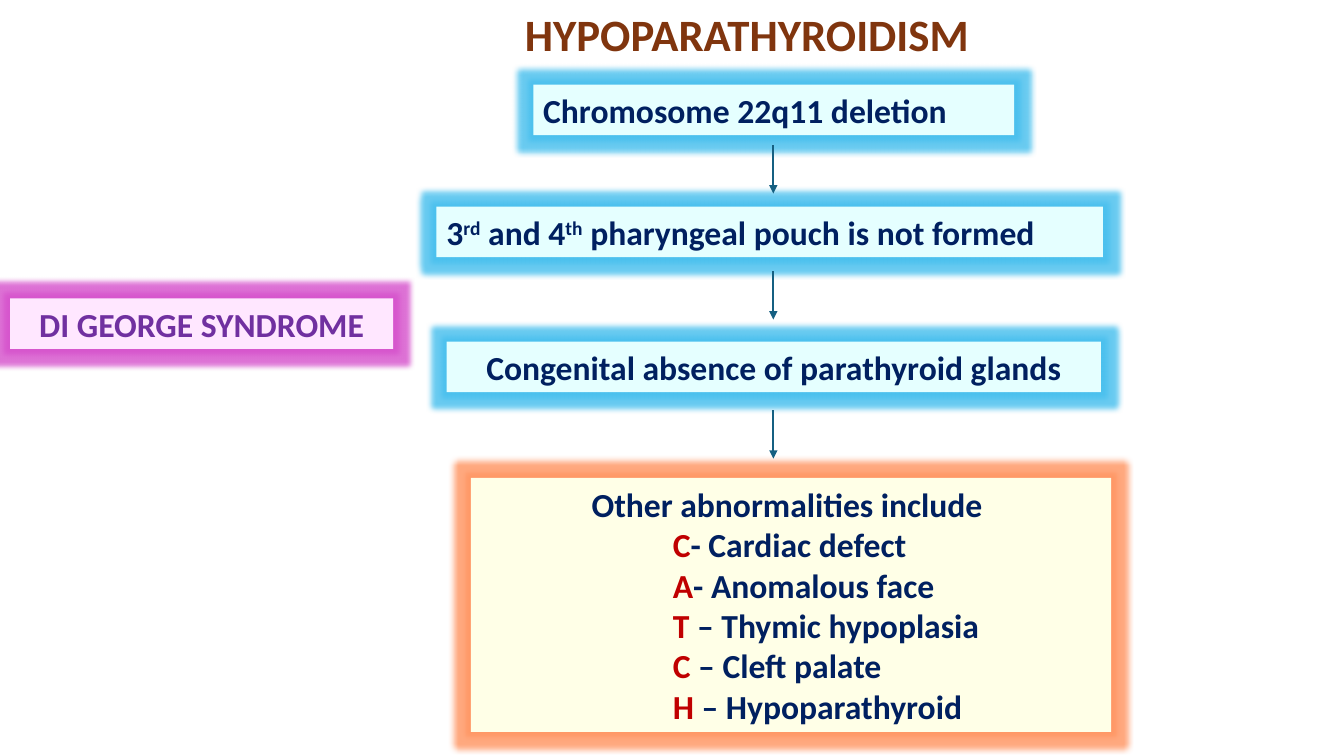
from lxml import etree
from pptx import Presentation
from pptx.dml.color import RGBColor
from pptx.enum.shapes import MSO_CONNECTOR, MSO_SHAPE
from pptx.enum.text import MSO_ANCHOR, MSO_AUTO_SIZE, PP_ALIGN
from pptx.oxml.ns import qn
from pptx.util import Inches, Pt

LEFT, CENTER = PP_ALIGN.LEFT, PP_ALIGN.CENTER
MIDDLE = MSO_ANCHOR.MIDDLE
FIT_SHAPE, NO_FIT = MSO_AUTO_SIZE.SHAPE_TO_FIT_TEXT, MSO_AUTO_SIZE.NONE
RECTANGLE, STRAIGHT = MSO_SHAPE.RECTANGLE, MSO_CONNECTOR.STRAIGHT

WIDTH, HEIGHT = Inches(13.33), Inches(7.5)
FONT = "Calibri"
NAVY, RED, PURPLE, BROWN, TEAL = "002060", "C00000", "7030A0", "80350E", "156082"
BLUE_BOX = ("E5FFFF", "45BFEE")
PINK_BOX = ("FFE7FF", "D650CC")
CREAM_BOX = ("FFFFE7", "FF9460")
ROW = 6.67

STEPS = [
    ((39.68, 11.2, 35.78, ROW), [("Chromosome 22q11 deletion", {})], LEFT),
    ((32.48, 27.33, 49.59, ROW),
     [("3", {}), ("rd", {"raised": True}), (" and 4", {}), ("th", {"raised": True}),
      (" pharyngeal pouch is not formed", {})], LEFT),
    ((33.23, 45.2, 48.69, ROW), [("Congenital absence of parathyroid glands", {})], CENTER),
]
ARROW_X, ARROW_LENGTH = 57.54, 6.4
ARROW_TOPS = [19.2, 35.87, 54.27]
ABNORMALITIES = [("C", "- Cardiac defect"), ("A", "- Anomalous face"),
                 ("T", " – Thymic hypoplasia"), ("C", " – Cleft palate"),
                 ("H", " – Hypoparathyroid")]


def rgb(code):
    return RGBColor.from_string(code)


def across(share):
    return round(WIDTH * share / 100)


def down(share):
    return round(HEIGHT * share / 100)


def place(box):
    x, y, w, h = box
    return across(x), down(y), across(w), down(h)


def write(paragraph, text, size=24, color=NAVY, raised=False):
    run = paragraph.add_run()
    run.text = text
    font = run.font
    font.name, font.size, font.bold = FONT, Pt(size), True
    font.color.rgb = rgb(color)
    if raised:
        run._r.get_or_add_rPr().set("baseline", "30000")


def indent(paragraph, share):
    properties = paragraph._p.get_or_add_pPr()
    properties.set("marL", str(across(share)))
    properties.set("indent", "0")


def glowing_box(slide, box, colors):
    fill, halo = colors
    panel = slide.shapes.add_shape(RECTANGLE, *place(box))
    panel.fill.solid()
    panel.fill.fore_color.rgb = rgb(fill)
    panel.line.fill.background()
    panel.shadow.inherit = False
    effects = panel._element.spPr.find(qn("a:effectLst"))
    glow = etree.SubElement(effects, qn("a:glow"), rad=str(Pt(8)))
    tint = etree.SubElement(glow, qn("a:srgbClr"), val=halo)
    etree.SubElement(tint, qn("a:alpha"), val="80000")
    frame = panel.text_frame
    frame.word_wrap = True
    frame.auto_size = FIT_SHAPE
    return frame


def add_title(slide, box):
    title = slide.shapes.title
    title.left, title.top, title.width, title.height = place(box)
    frame = title.text_frame
    frame.vertical_anchor = MIDDLE
    frame.auto_size = NO_FIT
    heading = frame.paragraphs[0]
    heading.alignment = CENTER
    heading.line_spacing = 0.9
    indent(heading, 11.1)
    write(heading, "HYPOPARATHYROIDISM", size=32, color=BROWN)


def add_label(slide, box, pieces, colors, alignment):
    label = glowing_box(slide, box, colors).paragraphs[0]
    label.alignment = alignment
    for text, style in pieces:
        write(label, text, **style)


def add_arrow(slide, x, top, length):
    arrow = slide.shapes.add_connector(
        STRAIGHT, across(x), down(top), across(x), down(top + length))
    arrow.line.color.rgb = rgb(TEAL)
    arrow.line.width = Pt(1.5)
    etree.SubElement(arrow.line._get_or_add_ln(), qn("a:tailEnd"), type="triangle")
    etree.SubElement(arrow._element.spPr, qn("a:effectLst"))


def add_abnormalities(slide, box):
    frame = glowing_box(slide, box, CREAM_BOX)
    heading = frame.paragraphs[0]
    heading.alignment = CENTER
    write(heading, "Other abnormalities include ")
    for initial, meaning in ABNORMALITIES:
        entry = frame.add_paragraph()
        entry.alignment = LEFT
        indent(entry, box[2] * 0.3)
        write(entry, initial, color=RED)
        write(entry, meaning)


def main():
    deck = Presentation()
    deck.slide_width, deck.slide_height = WIDTH, HEIGHT
    slide = deck.slides.add_slide(deck.slide_layouts[5])
    add_title(slide, (6.9, -1.47, 86.27, 12.67))
    add_label(slide, (0.75, 39.47, 28.5, ROW),
              [("DI GEORGE SYNDROME", {"color": PURPLE})], PINK_BOX, CENTER)
    for box, pieces, alignment in STEPS:
        add_label(slide, box, pieces, BLUE_BOX, alignment)
    add_abnormalities(slide, (35.03, 63.2, 47.64, 33.6))
    for top in ARROW_TOPS:
        add_arrow(slide, ARROW_X, top, ARROW_LENGTH)
    deck.save("out.pptx")


if __name__ == "__main__":
    main()
